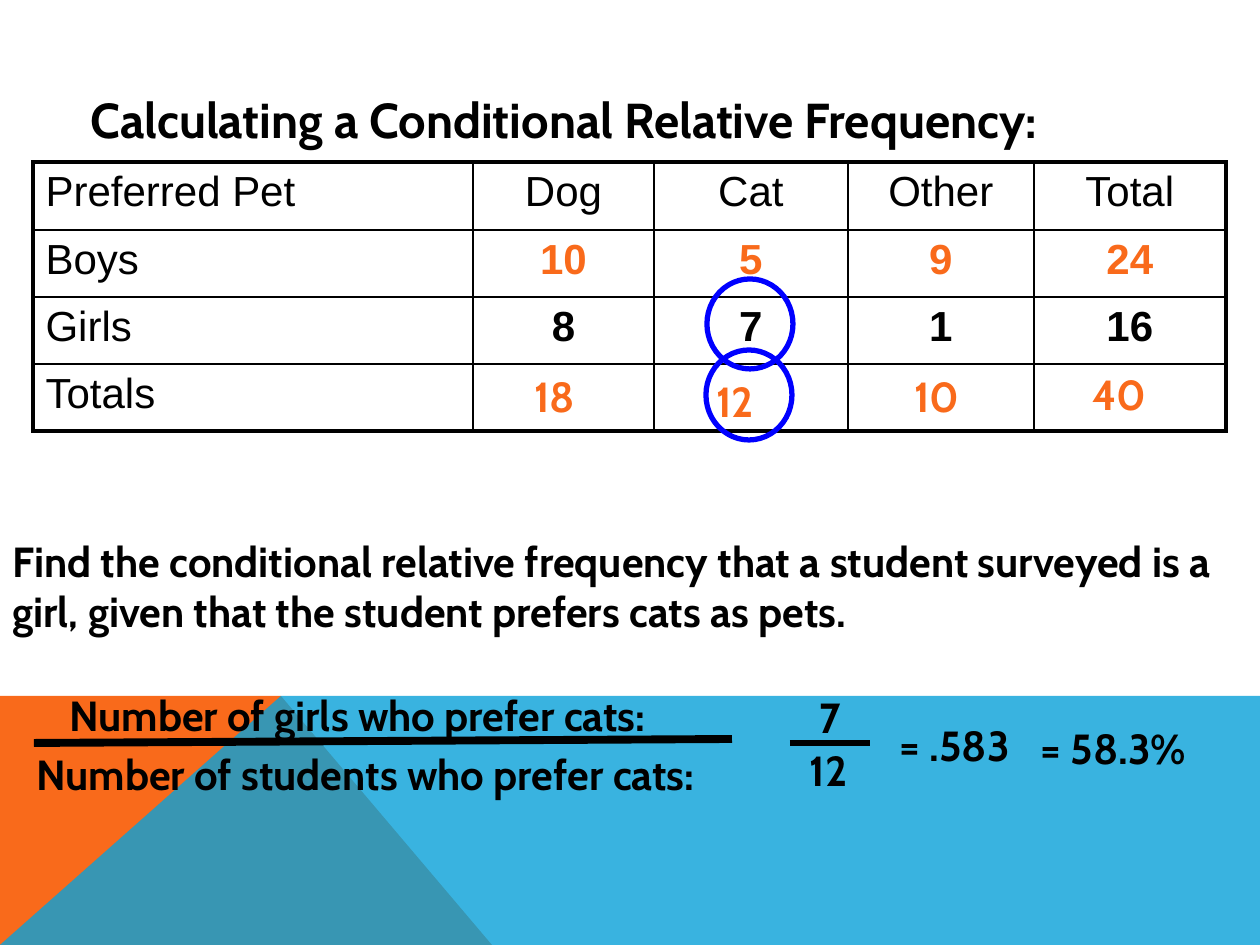
import pptx
import pptx.util
import pptx.dml.color
import pptx.enum.shapes
import pptx.enum.text
import pptx.oxml.ns
import lxml.etree

SCALE = 914400 / 126  # EMU in one px
COLORS = {"ink": "000000", "orange": "F96A1B", "blue": "08A1D9", "ring": "0000FF"}
qn = pptx.oxml.ns.qn


def px(*lengths):
    return [pptx.util.Emu(round(length * SCALE)) for length in lengths]


def write(frame, text, color, font="Cabin", size=24, bold=True):
    run = frame.paragraphs[0].add_run()
    run.text = text
    run.font.name = font
    run.font.size = pptx.util.Pt(size)
    run.font.bold = bold
    run.font.color.rgb = pptx.dml.color.RGBColor.from_string(COLORS[color])


deck = pptx.Presentation()
deck.slide_width, deck.slide_height = px(1260, 945)
slide = deck.slides.add_slide(deck.slide_layouts[6])
shapes = slide.shapes

# Bottom band: orange triangle under a translucent blue area
bands = [
    ("orange", 100, [(0, 945), (0, 696), (281, 696), (492, 945)]),
    ("blue", 80, [(0, 945), (281, 696), (1260, 696), (1260, 945)]),
]
for color, opacity, corners in bands:
    outline = shapes.build_freeform(*corners[0], scale=SCALE)
    outline.add_line_segments(corners[1:], close=True)
    band = outline.convert_to_shape()
    band.shadow.inherit = False
    band.line.fill.background()
    band.fill.solid()
    band.fill.fore_color.rgb = pptx.dml.color.RGBColor.from_string(COLORS[color])
    if opacity < 100:
        tint = band.fill._xPr.find(".//" + qn("a:srgbClr"))
        lxml.etree.SubElement(tint, qn("a:alpha"), val=str(opacity * 1000))

# Two-way frequency table; the totals are text boxes over its last row
counts = [
    ("Preferred Pet", "Dog", "Cat", "Other", "Total"),
    ("Boys", "10", "5", "9", "24"),
    ("Girls", "8", "7", "1", "16"),
    ("Totals", "", "", "", ""),
]
column_widths = [440, 181, 194, 186, 192]
row_heights = [68, 67, 67, 67]
last_row, last_column = len(row_heights) - 1, len(column_widths) - 1
table = shapes.add_table(
    len(row_heights), len(column_widths),
    *px(33, 162, sum(column_widths), sum(row_heights))).table
for column, width in zip(table.columns, px(*column_widths)):
    column.width = width
for row, height in zip(table.rows, px(*row_heights)):
    row.height = height

for r, row_texts in enumerate(counts):
    for c, text in enumerate(row_texts):
        cell = table.cell(r, c)
        is_count = r > 0 and c > 0
        if text:
            write(cell.text_frame, text, "orange" if r == 1 and is_count else "ink",
                  font="Arial", bold=is_count)
        if c > 0:
            cell.text_frame.paragraphs[0].alignment = pptx.enum.text.PP_ALIGN.CENTER
        # Thick outer frame, thin inner rules
        outer_sides = {"lnL": c == 0, "lnR": c == last_column,
                       "lnT": r == 0, "lnB": r == last_row}
        for side, is_outer in outer_sides.items():
            border = lxml.etree.SubElement(
                cell._tc.get_or_add_tcPr(), qn("a:" + side),
                w=str(pptx.util.Pt(2.25 if is_outer else 1)))
            fill = lxml.etree.SubElement(border, qn("a:solidFill"))
            lxml.etree.SubElement(fill, qn("a:srgbClr"), val=COLORS["ink"])
        cell.fill.background()

# Title, totals, question and worked answer: left, top, width, height
texts = [
    ("Calculating a Conditional Relative Frequency:", (78, 83, 1142, 72), "ink", 28),
    ("18", (522, 364, 98, 63), "orange", 24),
    ("12", (704, 369, 98, 63), "orange", 24),
    ("10", (902, 364, 98, 63), "orange", 24),
    ("40", (1080, 362, 98, 63), "orange", 24),
    ("Find the conditional relative frequency that a student surveyed is a girl, "
     "given that the student prefers cats as pets.", (0, 529, 1260, 113), "ink", 24),
    ("Number of students who prefer cats:", (24, 742, 789, 63), "ink", 24),
    ("Number of girls who prefer cats:", (57, 683, 717, 63), "ink", 24),
    (" 7", (798, 685, 79, 63), "ink", 24),
    (" 12", (788, 738, 103, 63), "ink", 24),
    ("= .583", (887, 713, 176, 63), "ink", 24),
    ("= 58.3%", (1028, 716, 205, 63), "ink", 24),
]
for text, place, color, size in texts:
    frame = shapes.add_textbox(*px(*place)).text_frame
    frame.word_wrap = True
    write(frame, text, color, size=size)

# Fraction bars
for ends, weight in [((34, 743, 732, 739), 4.5), ((790, 743, 870, 743), 3)]:
    bar = shapes.add_connector(pptx.enum.shapes.MSO_CONNECTOR.STRAIGHT, *px(*ends))
    bar.line.width = pptx.util.Pt(weight)
    bar.line.color.rgb = pptx.dml.color.RGBColor.from_string(COLORS["ink"])
    lxml.etree.SubElement(bar._element.spPr, qn("a:effectLst"))

# Rings around the two counts that are used
for left, top in [(707, 279), (706, 350)]:
    ring = shapes.add_shape(pptx.enum.shapes.MSO_SHAPE.OVAL, *px(left, top, 86, 90))
    ring.shadow.inherit = False
    ring.fill.background()
    ring.line.width = pptx.util.Pt(3)
    ring.line.color.rgb = pptx.dml.color.RGBColor.from_string(COLORS["ring"])

deck.save("out.pptx")
